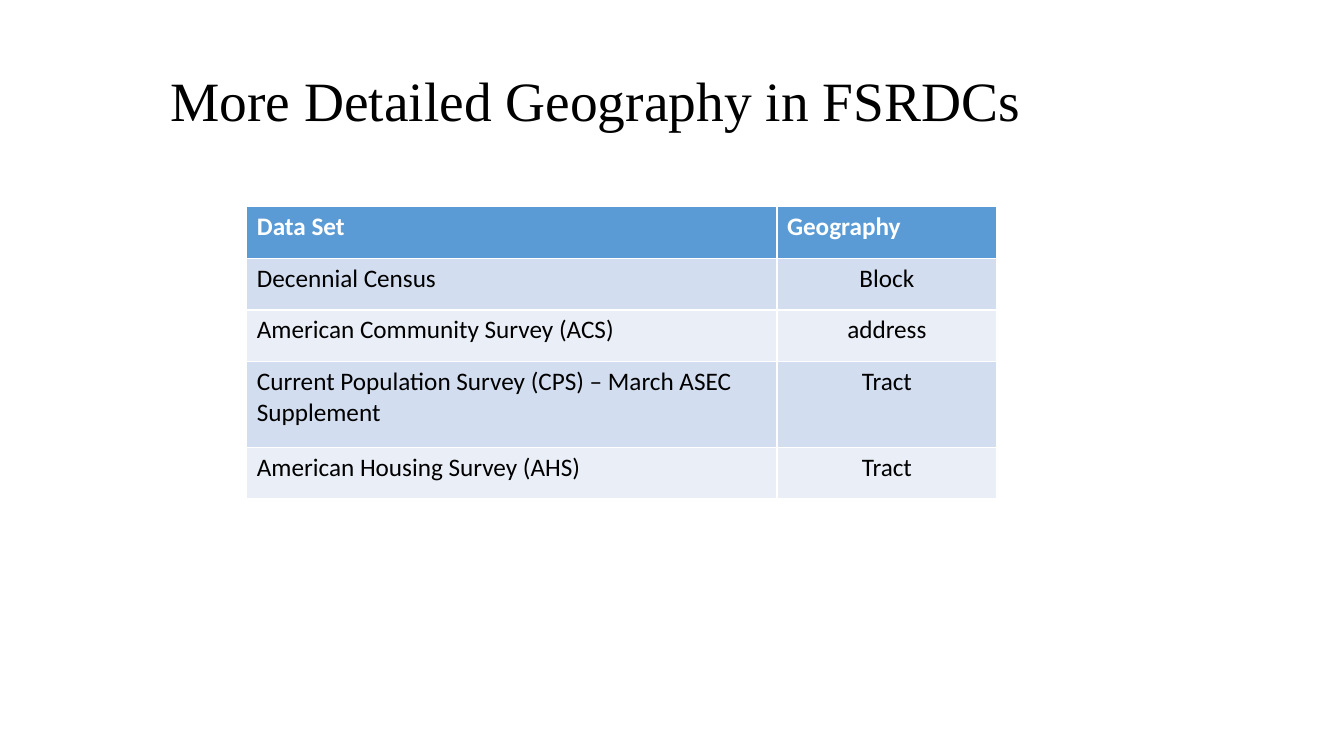
from pptx import Presentation
from pptx.dml.color import RGBColor
from pptx.enum.text import MSO_ANCHOR, MSO_AUTO_SIZE, PP_ALIGN
from pptx.util import Cm, Pt

TITLE = "More Detailed Geography in FSRDCs"
HEADER = ("Data Set", "Geography")
DATA_SETS = [
    ("Decennial Census", "Block"),
    ("American Community Survey (ACS)", "address"),
    ("Current Population Survey (CPS) – March ASEC Supplement", "Tract"),
    ("American Housing Survey (AHS)", "Tract"),
]
COLUMN_WIDTHS = (13.36, 5.54)
ROW_HEIGHTS = (1.3, 1.3, 1.3, 2.16, 1.3)
HEADER_FILL = "5B9BD5"
BAND_FILLS = ("D2DEEF", "EAEFF7")
BLACK, WHITE = "000000", "FFFFFF"


def color(value):
    return RGBColor.from_string(value)


def add_text(paragraph, text, font, size, text_color, bold=False):
    run = paragraph.add_run()
    run.text = text
    run.font.name = font
    run.font.size = Pt(size)
    run.font.bold = bold
    run.font.color.rgb = color(text_color)


def add_title(slide):
    title = slide.shapes.title
    title.left, title.top, title.width, title.height = Cm(4.04), Cm(1.02), Cm(22.86), Cm(3.18)
    frame = title.text_frame
    frame.word_wrap = True
    frame.auto_size = MSO_AUTO_SIZE.NONE
    frame.vertical_anchor = MSO_ANCHOR.MIDDLE
    paragraph = frame.paragraphs[0]
    paragraph.alignment = PP_ALIGN.LEFT
    paragraph.line_spacing = 0.9
    add_text(paragraph, TITLE, "Times New Roman", 39.6, BLACK)


def add_geography_table(slide):
    rows = [HEADER, *DATA_SETS]
    table = slide.shapes.add_table(
        len(rows), len(HEADER), Cm(6.22), Cm(5.21),
        Cm(sum(COLUMN_WIDTHS)), Cm(sum(ROW_HEIGHTS)),
    ).table
    for column, width in zip(table.columns, COLUMN_WIDTHS):
        column.width = Cm(width)
    for row_index, values in enumerate(rows):
        table.rows[row_index].height = Cm(ROW_HEIGHTS[row_index])
        is_header = row_index == 0
        fill = HEADER_FILL if is_header else BAND_FILLS[(row_index - 1) % 2]
        for column_index, text in enumerate(values):
            cell = table.cell(row_index, column_index)
            cell.fill.solid()
            cell.fill.fore_color.rgb = color(fill)
            paragraph = cell.text_frame.paragraphs[0]
            centered = column_index == 1 and not is_header
            paragraph.alignment = PP_ALIGN.CENTER if centered else PP_ALIGN.LEFT
            add_text(paragraph, text, "Calibri", 18, WHITE if is_header else BLACK, is_header)


def main():
    presentation = Presentation()
    presentation.slide_width, presentation.slide_height = Cm(33.87), Cm(19.05)
    slide = presentation.slides.add_slide(presentation.slide_layouts[5])
    add_title(slide)
    add_geography_table(slide)
    presentation.save("out.pptx")


if __name__ == "__main__":
    main()
